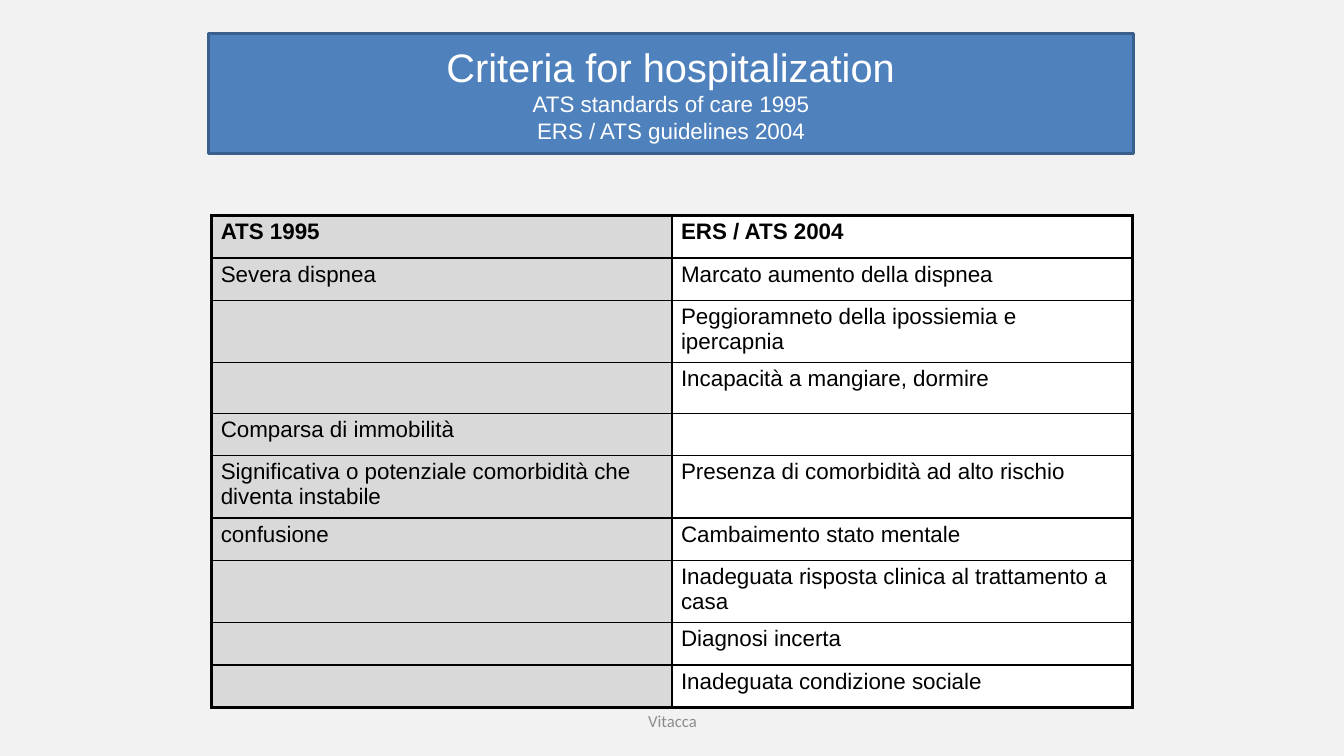
from lxml.etree import SubElement
from pptx import Presentation
from pptx.dml.color import RGBColor
from pptx.enum.text import MSO_ANCHOR, MSO_AUTO_SIZE, PP_ALIGN
from pptx.oxml import parse_xml
from pptx.oxml.ns import nsdecls, qn
from pptx.util import Inches, Pt

HEAD = [
    ("Criteria for hospitalization", "title"),
    ("ATS standards of care 1995", "body"),
    ("ERS / ATS guidelines 2004", "body"),
]
ROWS = [  # height, ATS 1995, ERS / ATS 2004
    (0.42, "ATS 1995", "ERS / ATS 2004"),
    (0.42, "Severa dispnea", "Marcato aumento della dispnea"),
    (0.62, "", "Peggioramneto della ipossiemia e ipercapnia"),
    (0.5, "", "Incapacità a mangiare, dormire"),
    (0.42, "Comparsa di immobilità", ""),
    (0.62, "Significativa o potenziale comorbidità che diventa instabile",
     "Presenza di comorbidità ad alto rischio"),
    (0.42, "confusione", "Cambaimento stato mentale"),
    (0.62, "", "Inadeguata risposta clinica al trattamento a casa"),
    (0.42, "", "Diagnosi incerta"),
    (0.42, "", "Inadeguata condizione sociale"),
]
FOOT = "Vitacca"


class Theme:
    back, banner, edge = "F2F2F2", "4F81BD", "3A5F8C"
    light, ink, muted = "FFFFFF", "000000", "8C8C8C"
    cols = ("D9D9D9", "FFFFFF")
    size = {"title": 28.4, "body": 16, "foot": 12}
    font, small = "Arial", "Calibri"
    thin, thick = 1, 2.25


def paint(fill, color):
    fill.solid()
    fill.fore_color.rgb = RGBColor.from_string(color)


def write(para, text, size, color, font=Theme.font, bold=False):
    run = para.add_run()
    run.text = text
    run.font.size = Pt(Theme.size[size])
    run.font.name = font
    run.font.bold = bold
    run.font.color.rgb = RGBColor.from_string(color)


def place(shape, box):
    shape.left, shape.top, shape.width, shape.height = map(Inches, box)


def inset(item):
    item.margin_left = item.margin_right = Inches(0.09)
    item.margin_top = item.margin_bottom = Inches(0.04)


def border(cell, outer):
    """Draw all four edges; those named in outer are thick."""
    props = cell._tc.get_or_add_tcPr()
    for index, side in enumerate("LRTB"):
        width = Theme.thick if side in outer else Theme.thin
        line = parse_xml(f'<a:ln{side} {nsdecls("a")} w="{Pt(width)}"/>')
        fill = SubElement(line, qn("a:solidFill"))
        SubElement(fill, qn("a:srgbClr"), val=Theme.ink)
        props.insert(index, line)


def add_head(slide):
    head = slide.shapes.title
    place(head, (2.07, 0.33, 9.17, 1.19))
    paint(head.fill, Theme.banner)
    paint(head.line.fill, Theme.edge)
    head.line.width = Pt(2)
    frame = head.text_frame
    inset(frame)
    frame.auto_size = MSO_AUTO_SIZE.NONE
    frame.vertical_anchor = MSO_ANCHOR.MIDDLE
    for index, (text, size) in enumerate(HEAD):
        para = frame.add_paragraph() if index else frame.paragraphs[0]
        para.alignment = PP_ALIGN.CENTER
        write(para, text, size, Theme.light)


def add_grid(slide):
    tall = sum(row[0] for row in ROWS)
    grid = slide.shapes.add_table(
        len(ROWS), 2, Inches(2.1), Inches(2.14), Inches(9.13), Inches(tall)
    ).table
    grid.first_row = grid.horz_banding = False
    last = len(ROWS) - 1
    for r, (height, *texts) in enumerate(ROWS):
        grid.rows[r].height = Inches(height)
        for c, text in enumerate(texts):
            cell = grid.cell(r, c)
            inset(cell)
            paint(cell.fill, Theme.cols[c])
            ends = ("T" if r == 0 else "") + ("B" if r == last else "")
            border(cell, "LR"[c] + ends)
            if text:
                write(cell.text_frame.paragraphs[0], text, "body",
                      Theme.ink, bold=r == 0)


def add_foot(slide):
    foot = slide.shapes.add_textbox(0, 0, 0, 0)
    place(foot, (4.56, 6.95, 4.22, 0.4))
    frame = foot.text_frame
    frame.word_wrap = True
    frame.vertical_anchor = MSO_ANCHOR.MIDDLE
    para = frame.paragraphs[0]
    para.alignment = PP_ALIGN.CENTER
    write(para, FOOT, "foot", Theme.muted, Theme.small)


def main():
    deck = Presentation()
    deck.slide_width, deck.slide_height = Inches(13.33), Inches(7.5)
    slide = deck.slides.add_slide(deck.slide_layouts[5])
    paint(slide.background.fill, Theme.back)
    add_head(slide)
    add_grid(slide)
    add_foot(slide)
    deck.save("out.pptx")


if __name__ == "__main__":
    main()
